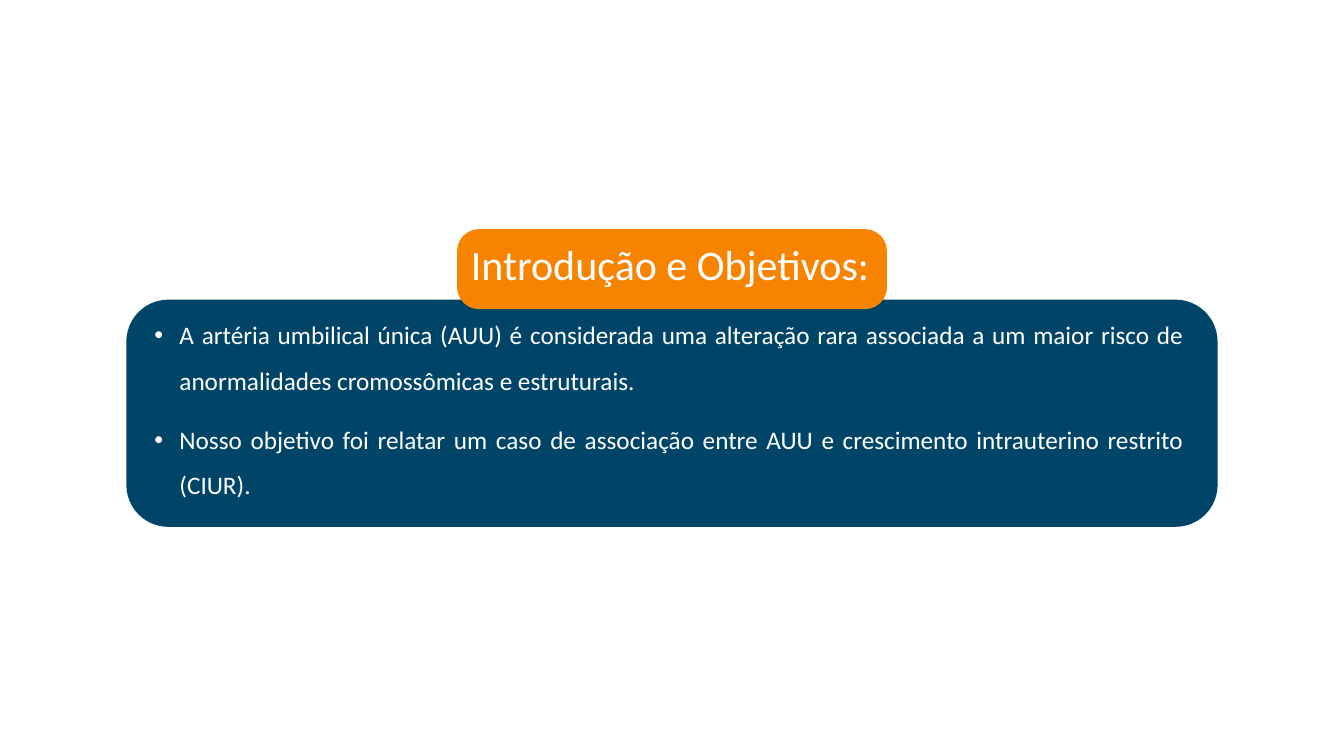
from pptx import Presentation
from pptx import util as u
from pptx.dml.color import RGBColor
from pptx.enum import shapes, text


def rgb(value):
    return RGBColor.from_string(value)


prs = Presentation()
prs.slide_width, prs.slide_height = u.Inches(13.33), u.Inches(7.5)
slide = prs.slides.add_slide(prs.slide_layouts[1])

# Rounded panels, kept behind the placeholders
panels = [
    ((1.26, 2.98, 10.81, 2.24), 0.41, "004567"),
    ((4.54, 2.28, 4.25, 0.78), 0.21, "F78401"),
]
for i, (box, radius, color) in enumerate(panels):
    sp = slide.shapes.add_shape(
        shapes.MSO_SHAPE.ROUNDED_RECTANGLE, *map(u.Inches, box))
    sp.adjustments[0] = radius / box[3]
    sp.shadow.inherit = False
    sp.fill.solid()
    sp.fill.fore_color.rgb = sp.line.color.rgb = rgb(color)
    sp.line.width = u.Pt(1)
    slide.shapes._spTree.insert(2 + i, sp._element)

# Title and bullet list
title, body = slide.placeholders
contents = [
    (title, (4.67, 2.36, 3.99, 0.53), 30, ["Introdução e Objetivos:"],
     {"alignment": text.PP_ALIGN.LEFT, "line_spacing": 1.0}),
    (body, (1.52, 3.01, 10.22, 1.97), 18,
     ["A artéria umbilical única (AUU) é considerada uma alteração rara "
      "associada a um maior risco de anormalidades cromossômicas e estruturais.",
      "Nosso objetivo foi relatar um caso de associação entre AUU e "
      "crescimento intrauterino restrito (CIUR)."],
     {"alignment": text.PP_ALIGN.JUSTIFY, "line_spacing": 1.5}),
]
for sp, box, size, lines, layout in contents:
    sp.left, sp.top, sp.width, sp.height = map(u.Inches, box)
    tf = sp.text_frame
    frame = {"margin_left": 0, "margin_right": 0, "margin_bottom": 0,
             "margin_top": u.Inches(0.01), "word_wrap": True,
             "auto_size": text.MSO_AUTO_SIZE.NONE,
             "vertical_anchor": text.MSO_ANCHOR.TOP}
    for name, value in frame.items():
        setattr(tf, name, value)
    tf.text = "\n".join(lines)
    for i, p in enumerate(tf.paragraphs):
        for name, value in layout.items():
            setattr(p, name, value)
        p.space_before = u.Pt(10 if i else 0)
        if sp is body:
            pPr = p._p.get_or_add_pPr()
            pPr.set("marL", str(u.Inches(0.26)))
            pPr.set("indent", str(u.Inches(-0.25)))
        for r in p.runs:
            for name, value in {"name": "Calibri", "size": u.Pt(size)}.items():
                setattr(r.font, name, value)
            r.font.color.rgb = rgb("FFFFFF")

prs.save("out.pptx")
